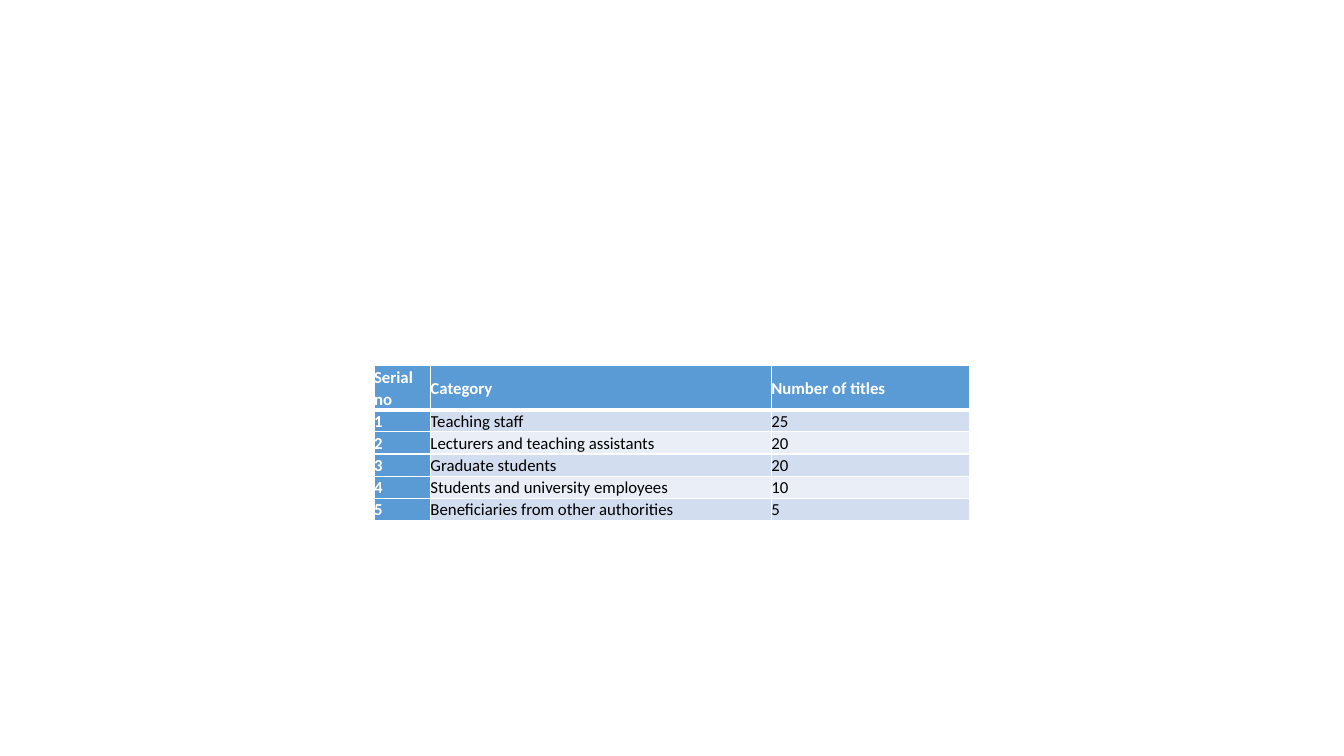
from lxml import etree
from pptx import Presentation
from pptx.dml.color import RGBColor
from pptx.enum.text import MSO_ANCHOR, PP_ALIGN
from pptx.oxml.ns import qn
from pptx.util import Inches, Pt

MIDDLE, LEFT = MSO_ANCHOR.MIDDLE, PP_ALIGN.LEFT

HEADINGS = ("Serial no", "Category", "Number of titles")
TITLES_BY_CATEGORY = [
    ("Teaching staff", 25),
    ("Lecturers and teaching assistants", 20),
    ("Graduate students", 20),
    ("Students and university employees", 10),
    ("Beneficiaries from other authorities", 5),
]
COLORS = {"accent": "5B9BD5", "odd": "D2DEEF", "even": "EAEFF7",
          "light": "FFFFFF", "dark": "000000"}
COLUMN_WIDTHS = (0.56, 3.38, 1.97)
HEADING_HEIGHT, CATEGORY_HEIGHT = 0.43, 0.22
TABLE_LEFT, TABLE_TOP = 3.71, 3.63
CELL_FORMAT = {"margin_left": 0, "margin_right": 0, "margin_top": 0,
               "margin_bottom": 0, "vertical_anchor": MIDDLE}
PARAGRAPH_FORMAT = {"alignment": LEFT, "line_spacing": 1.07, "space_after": Pt(8)}


def apply_format(target, values):
    """Set each named attribute on the target."""
    for name, value in values.items():
        setattr(target, name, value)


def add_borders(cell, top_width, bottom_width):
    """Give the cell white borders on all four sides."""
    properties = cell._tc.get_or_add_tcPr()
    widths = {"lnL": 1, "lnR": 1, "lnT": top_width, "lnB": bottom_width}
    for position, (side, width) in enumerate(widths.items()):
        border = etree.Element(qn(f"a:{side}"), w=str(Pt(width)))
        fill = etree.SubElement(border, qn("a:solidFill"))
        etree.SubElement(fill, qn("a:srgbClr"), val=COLORS["light"])
        properties.insert(position, border)


def fill_cell(cell, text, row, column):
    """Write and style one cell by its place in the table."""
    is_heading = row == 0 or column == 0
    band = "accent" if is_heading else "odd" if row % 2 else "even"
    apply_format(cell, CELL_FORMAT)
    cell.fill.solid()
    cell.fill.fore_color.rgb = RGBColor.from_string(COLORS[band])
    add_borders(cell, 3 if row == 1 else 1, 3 if row == 0 else 1)
    cell.text = str(text)
    paragraph = cell.text_frame.paragraphs[0]
    apply_format(paragraph, PARAGRAPH_FORMAT)
    font = paragraph.runs[0].font
    apply_format(font, {"name": "Calibri", "size": Pt(12), "bold": is_heading})
    font.color.rgb = RGBColor.from_string(COLORS["light" if is_heading else "dark"])


def main():
    """Build the slide with the table of titles per category."""
    deck = Presentation()
    deck.slide_width, deck.slide_height = Inches(13.33), Inches(7.5)
    slide = deck.slides.add_slide(deck.slide_layouts[6])

    entries = [HEADINGS] + [(serial, *entry) for serial, entry
                            in enumerate(TITLES_BY_CATEGORY, 1)]
    heights = [HEADING_HEIGHT] + [CATEGORY_HEIGHT] * len(TITLES_BY_CATEGORY)
    titles = slide.shapes.add_table(
        len(entries), len(HEADINGS), Inches(TABLE_LEFT), Inches(TABLE_TOP),
        Inches(sum(COLUMN_WIDTHS)), Inches(sum(heights))).table
    titles.first_col = True

    for column, width in zip(titles.columns, COLUMN_WIDTHS):
        column.width = Inches(width)
    for row, (entry, height) in enumerate(zip(entries, heights)):
        titles.rows[row].height = Inches(height)
        for column, text in enumerate(entry):
            fill_cell(titles.cell(row, column), text, row, column)

    deck.save("out.pptx")


if __name__ == "__main__":
    main()
